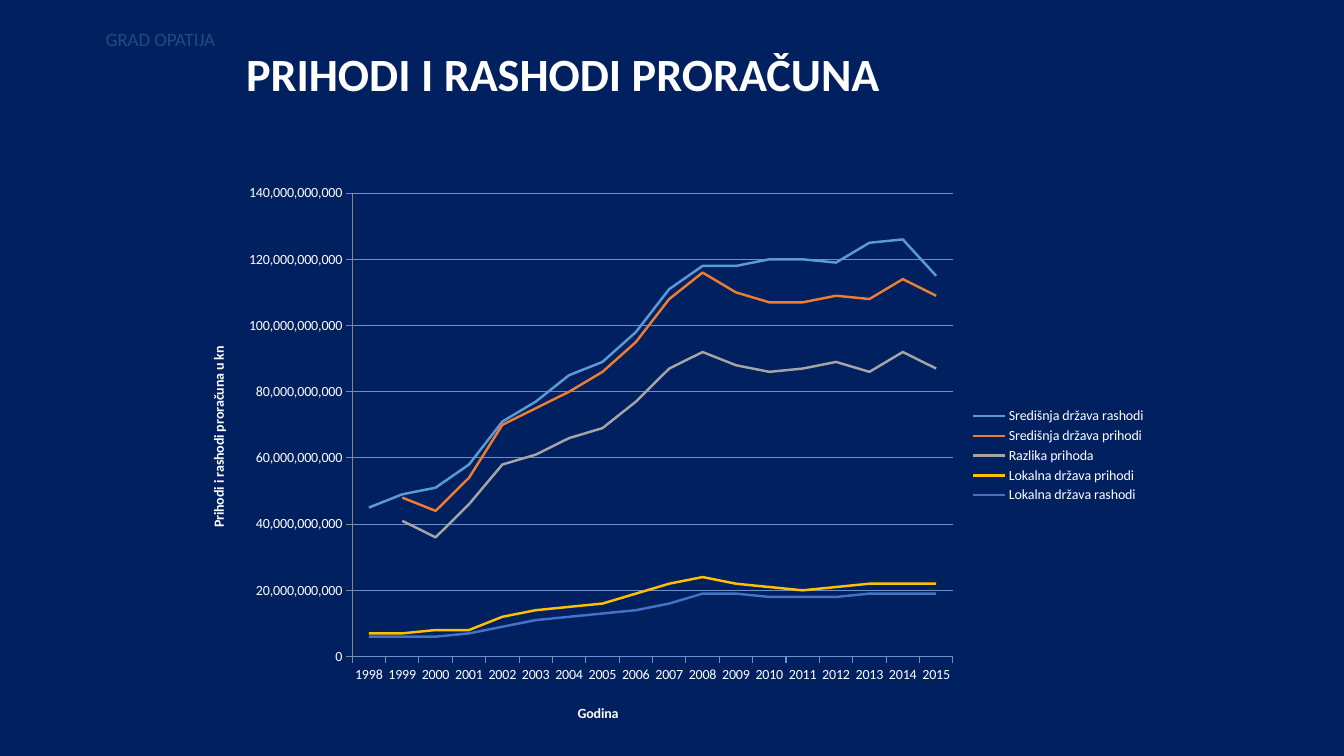
from lxml import etree
from pptx import Presentation
from pptx.chart.data import CategoryChartData
from pptx.dml.color import RGBColor
from pptx.enum.chart import XL_CHART_TYPE, XL_LEGEND_POSITION, XL_TICK_MARK
from pptx.enum.text import MSO_ANCHOR, MSO_AUTO_SIZE, PP_ALIGN
from pptx.oxml.ns import qn
from pptx.util import Inches, Pt

LINE = XL_CHART_TYPE.LINE
RIGHT = XL_LEGEND_POSITION.RIGHT
OUT = XL_TICK_MARK.OUTSIDE
MIDDLE = MSO_ANCHOR.MIDDLE
FIXED = MSO_AUTO_SIZE.NONE
LEFT = PP_ALIGN.LEFT

FONT = "Calibri"
WHITE = "FFFFFF"
NAVY = "002060"
GRID = "6D8FCB"
BILLION = 10 ** 9
OWNER = "GRAD OPATIJA"
TITLE = "PRIHODI I RASHODI PRORAČUNA"
YEARS = range(1998, 2016)
SERIES = [
    ("Središnja država rashodi", "5B9BD5",
     [45, 49, 51, 58, 71, 77, 85, 89, 98, 111, 118, 118, 120, 120, 119, 125, 126, 115]),
    ("Središnja država prihodi", "ED7D31",
     [None, 48, 44, 54, 70, 75, 80, 86, 95, 108, 116, 110, 107, 107, 109, 108, 114, 109]),
    ("Razlika prihoda", "A5A5A5",
     [None, 41, 36, 46, 58, 61, 66, 69, 77, 87, 92, 88, 86, 87, 89, 86, 92, 87]),
    ("Lokalna država prihodi", "FFC000",
     [7, 7, 8, 8, 12, 14, 15, 16, 19, 22, 24, 22, 21, 20, 21, 22, 22, 22]),
    ("Lokalna država rashodi", "4472C4",
     [6, 6, 6, 7, 9, 11, 12, 13, 14, 16, 19, 19, 18, 18, 18, 19, 19, 19]),
]


def color(code):
    return RGBColor.from_string(code)


def style(font, size, code, bold=False):
    font.name = FONT
    font.size = Pt(size)
    font.bold = bold
    font.color.rgb = color(code)


def write(frame, text, size, code, bold=False):
    run = frame.paragraphs[0].add_run()
    run.text = text
    style(run.font, size, code, bold)


def stroke(line, code, width):
    line.color.rgb = color(code)
    line.width = Pt(width)


def place(node, index, **spots):
    for old in node.findall(qn("c:layout")):
        node.remove(old)
    layout = etree.Element(qn("c:layout"))
    manual = etree.SubElement(layout, qn("c:manualLayout"))
    if "w" in spots:
        etree.SubElement(manual, qn("c:layoutTarget")).set("val", "inner")
    for key in "xy":
        etree.SubElement(manual, qn(f"c:{key}Mode")).set("val", "edge")
    for key, value in spots.items():
        etree.SubElement(manual, qn(f"c:{key}")).set("val", str(value))
    node.insert(index, layout)


def label(axis, text, code, x, y):
    title = axis.axis_title
    write(title.text_frame, text, 10, WHITE, True)
    place(title._element, 1, x=x, y=y)
    style(axis.tick_labels.font, 10, WHITE)
    axis.major_tick_mark = OUT
    stroke(axis.format.line, code, 0.75)


def add_head(slide):
    box = slide.shapes.add_textbox(Inches(0.95), Inches(0.23), Inches(1.3), Inches(0.33))
    box.text_frame.word_wrap = False
    write(box.text_frame, OWNER, 13.5, "1F4E79")

    title = slide.shapes.title
    title.left, title.top = Inches(2.34), Inches(0.13)
    title.width, title.height = Inches(7.92), Inches(1.25)
    frame = title.text_frame
    frame.auto_size = FIXED
    frame.vertical_anchor = MIDDLE
    frame.paragraphs[0].alignment = LEFT
    frame.paragraphs[0].line_spacing = 0.9
    write(frame, TITLE, 33, WHITE, True)


def add_graph(slide):
    data = CategoryChartData(number_format="#,##0")
    data.categories = [str(year) for year in YEARS]
    for name, _, values in SERIES:
        data.add_series(name, [None if v is None else v * BILLION for v in values])
    chart = slide.shapes.add_chart(
        LINE, Inches(1.86), Inches(1.75), Inches(9.61), Inches(5.54), data).chart
    style(chart.font, 10, WHITE)
    chart.has_title = False
    chart.has_legend = True
    chart.legend.position = RIGHT
    chart.legend.include_in_layout = False
    style(chart.legend.font, 10, WHITE)

    plot = chart.plots[0]
    plot.vary_by_categories = False
    for series, (_, code, _) in zip(plot.series, SERIES):
        series.smooth = False
        stroke(series.format.line, code, 1.75)

    label(chart.category_axis, "Godina", GRID, 0.4, 0.94)
    axis = chart.value_axis
    label(axis, "Prihodi i rashodi proračuna u kn", "878787", 0.02, 0.3)
    axis.minimum_scale = 0
    axis.maximum_scale = 140 * BILLION
    axis.major_unit = 20 * BILLION
    axis.tick_labels.number_format = "#,##0"
    axis.tick_labels.number_format_is_linked = False
    axis.has_major_gridlines = True
    stroke(axis.major_gridlines.format.line, GRID, 0.75)
    area = chart._chartSpace.find(".//" + qn("c:plotArea"))
    place(area, 0, x=0.17, y=0.03, w=0.62, h=0.83)


def main():
    deck = Presentation()
    deck.slide_width, deck.slide_height = Inches(13.33), Inches(7.5)
    slide = deck.slides.add_slide(deck.slide_layouts[5])
    slide.background.fill.solid()
    slide.background.fill.fore_color.rgb = color(NAVY)
    add_head(slide)
    add_graph(slide)
    deck.save("out.pptx")


if __name__ == "__main__":
    main()
